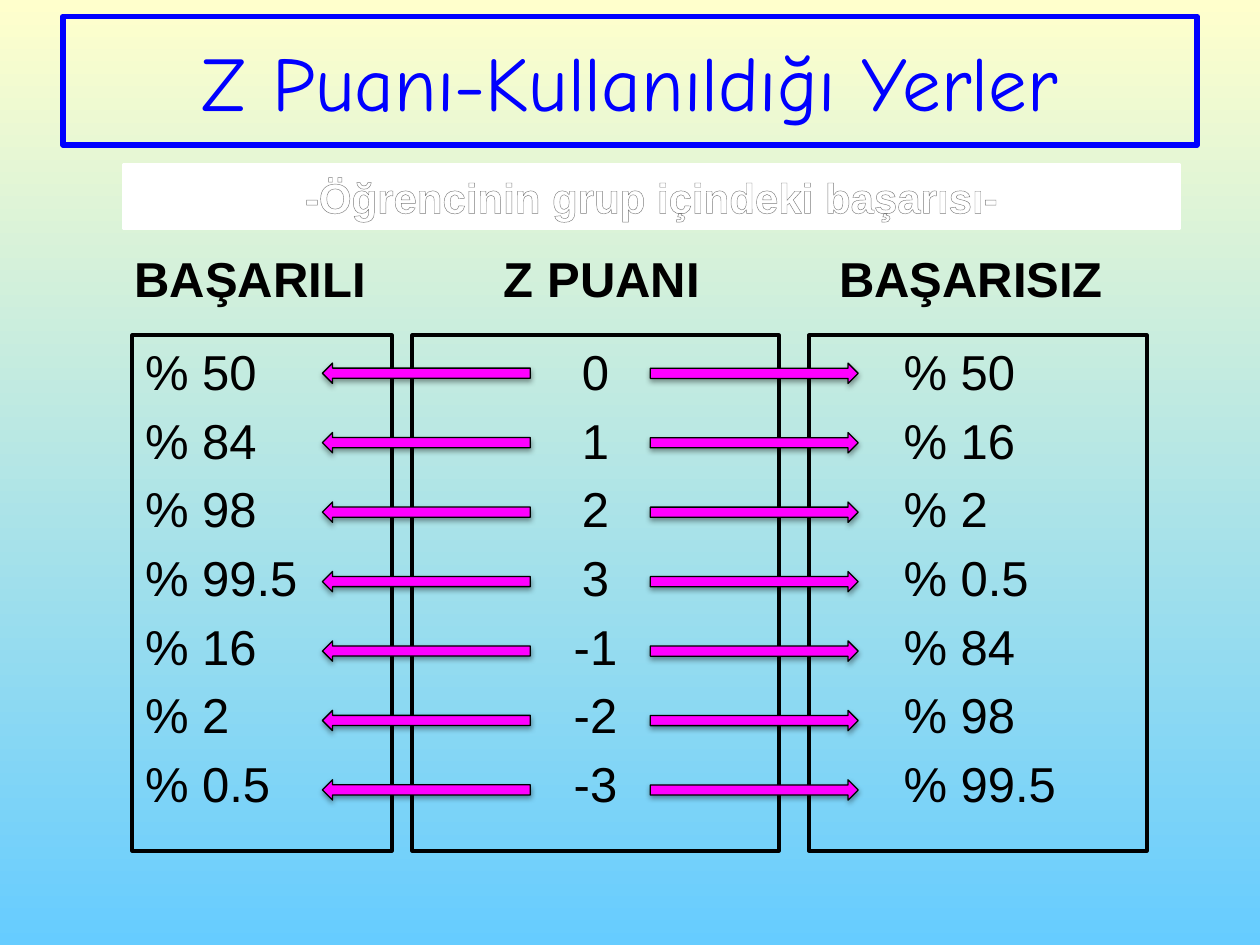
from lxml import etree
from pptx import Presentation
from pptx.dml.color import RGBColor
from pptx.enum.shapes import MSO_SHAPE
from pptx.enum.text import MSO_ANCHOR, MSO_AUTO_SIZE, PP_ALIGN
from pptx.oxml import parse_xml
from pptx.oxml.ns import nsdecls, qn
from pptx.util import Cm, Pt

BLACK = RGBColor(0, 0, 0)
WHITE = RGBColor(255, 255, 255)
BLUE = RGBColor(0, 0, 255)
MAGENTA = RGBColor(255, 0, 255)
CREAM = RGBColor(255, 255, 204)
SKY = RGBColor(102, 204, 255)

TITLE = "Z Puanı-Kullanıldığı Yerler"
SUBTITLE = "-Öğrencinin grup içindeki başarısı-"
COLUMNS = [
    {"heading": "BAŞARILI", "heading_at": (2.46, 5, 5.44, 1.32), "ids": (1, 2),
     "left": 2.67, "width": 5.23, "indent": 0, "align": PP_ALIGN.LEFT,
     "values": ["% 50", "% 84", "% 98", "% 99.5", "% 16", "% 2", "% 0.5"]},
    {"heading": "BAŞARISIZ", "heading_at": (16.66, 4.55, 8.74, 1.78), "ids": (3, 4),
     "left": 16.31, "width": 6.81, "indent": 1.65, "align": PP_ALIGN.LEFT,
     "values": ["% 50", "% 16", "% 2", "% 0.5", "% 84", "% 98", "% 99.5"]},
    {"heading": "Z PUANI", "heading_at": (9.91, 4.55, 5.21, 1.78), "ids": None,
     "left": 8.31, "width": 7.39, "indent": 0, "align": PP_ALIGN.CENTER,
     "values": ["0", "1", "2", "3", "-1", "-2", "-3"]},
]
COLUMN_TOP, COLUMN_HEIGHT = 6.76, 10.39
ARROW_TOP, ARROW_STEP, ARROW_WIDTH, ARROW_HEIGHT = 7.32, 1.4, 4.19, 0.41
ARROW_SIDES = [(6.5, 0), (13.11, 180)]
SUBTITLE_STOPS = [(0, "FFFFFF"), (9, "FFFFFF"), (50, "7F7F7F"), (79, "FFFFFF"), (100, "FFFFFF")]


def place(box, left, top, width, height):
    box.left, box.top, box.width, box.height = Cm(left), Cm(top), Cm(width), Cm(height)


def outline(box, color, width):
    box.line.color.rgb = color
    box.line.width = Pt(width)


def write(box, lines, size, color=None, bold=False, font="Arial", align=None, indent=None):
    frame = box.text_frame
    frame.word_wrap = True
    frame.auto_size = MSO_AUTO_SIZE.NONE
    frame.text = "\n".join(lines)
    for para in frame.paragraphs:
        para.alignment = align
        if indent is not None:
            format_list(para, indent)
        span = para.runs[0].font
        span.name, span.size, span.bold = font, Pt(size), bold
        if color is not None:
            span.color.rgb = color


def format_list(para, indent):
    properties = para._p.get_or_add_pPr()
    properties.set("marL", str(Cm(indent)))
    properties.set("indent", "0")
    spacing = etree.SubElement(properties, qn("a:spcBef"))
    etree.SubElement(spacing, qn("a:spcPct")).set("val", "20000")
    etree.SubElement(properties, qn("a:buNone"))


def add_column(page, column):
    if column["ids"]:
        heading, body = (page.placeholders[number] for number in column["ids"])
    else:
        heading, body = (page.shapes.add_textbox(0, 0, 0, 0) for _ in range(2))
    place(heading, *column["heading_at"])
    write(heading, [column["heading"]], 28, BLACK, bold=True, indent=0)
    heading.text_frame.vertical_anchor = MSO_ANCHOR.BOTTOM
    place(body, column["left"], COLUMN_TOP, column["width"], COLUMN_HEIGHT)
    write(body, column["values"], 28, BLACK, align=column["align"], indent=column["indent"])
    outline(body, BLACK, 2.25)


def add_arrow(page, left, top, rotation):
    arrow = page.shapes.add_shape(MSO_SHAPE.LEFT_ARROW, 0, 0, 0, 0)
    place(arrow, left, top, ARROW_WIDTH, ARROW_HEIGHT)
    arrow.rotation = rotation
    arrow.fill.solid()
    arrow.fill.fore_color.rgb = MAGENTA
    outline(arrow, BLACK, 0.75)
    arrow._element.spPr.append(parse_xml(
        f'<a:effectLst {nsdecls("a")}><a:outerShdw blurRad="{Pt(3.1)}" dist="{Pt(1.6)}" '
        'dir="5400000" rotWithShape="0"><a:srgbClr val="000000"><a:alpha val="38000"/>'
        '</a:srgbClr></a:outerShdw></a:effectLst>'))


def add_subtitle(page):
    box = page.shapes.add_shape(MSO_SHAPE.RECTANGLE, 0, 0, 0, 0)
    place(box, 2.49, 3.33, 21.29, 1.27)
    box.shadow.inherit = False
    box.fill.solid()
    box.fill.fore_color.rgb = WHITE
    outline(box, WHITE, 2)
    write(box, [SUBTITLE], 24, bold=True, align=PP_ALIGN.CENTER)
    box.text_frame.auto_size = MSO_AUTO_SIZE.SHAPE_TO_FIT_TEXT
    stops = "".join(f'<a:gs pos="{position * 1000}"><a:srgbClr val="{color}"/></a:gs>'
                    for position, color in SUBTITLE_STOPS)
    properties = box.text_frame.paragraphs[0].runs[0].font._element
    properties.insert(0, parse_xml(
        f'<a:ln {nsdecls("a")} w="{Pt(0.83)}"><a:solidFill><a:srgbClr val="7D7D7D"/>'
        '</a:solidFill></a:ln>'))
    properties.insert(1, parse_xml(
        f'<a:gradFill {nsdecls("a")}><a:gsLst>{stops}</a:gsLst>'
        '<a:lin ang="5400000" scaled="0"/></a:gradFill>'))


def main():
    deck = Presentation()
    deck.slide_width, deck.slide_height = Cm(25.4), Cm(19.05)
    page = deck.slides.add_slide(deck.slide_layouts.get_by_name("Comparison"))
    background = page.background.fill
    background.gradient()
    background.gradient_angle = 270
    for stop, color in zip(background.gradient_stops, (CREAM, SKY)):
        stop.color.rgb = color

    title = page.shapes.title
    place(title, 1.27, 0.33, 22.86, 2.59)
    write(title, [TITLE], 44, BLUE, font="Comic Neue", align=PP_ALIGN.CENTER)
    outline(title, BLUE, 3.25)

    for column in COLUMNS:
        add_column(page, column)
    for left, rotation in ARROW_SIDES:
        for row in range(len(COLUMNS[0]["values"])):
            add_arrow(page, left, ARROW_TOP + row * ARROW_STEP, rotation)
    add_subtitle(page)
    deck.save("out.pptx")


if __name__ == "__main__":
    main()
